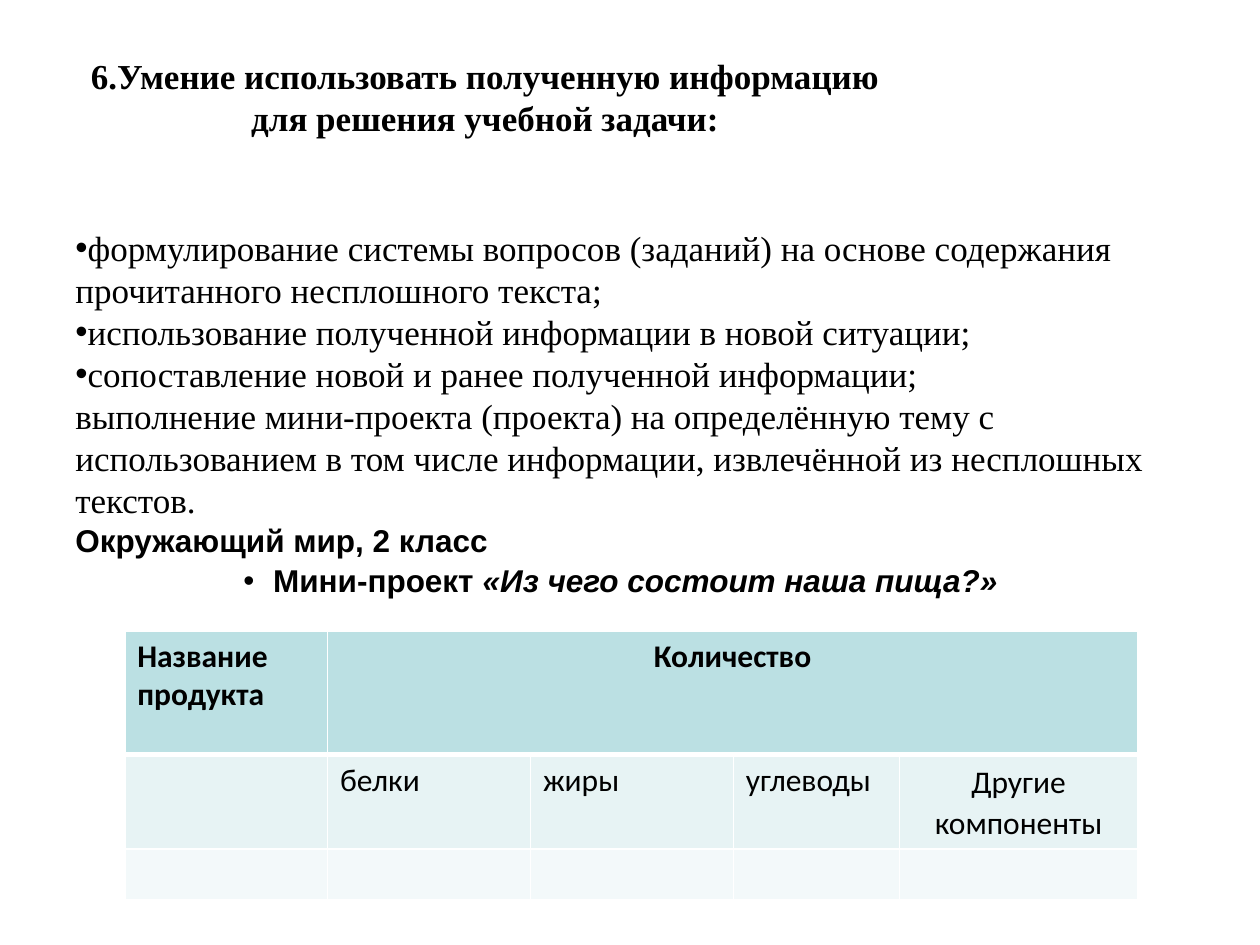
from lxml import etree
from pptx import Presentation
from pptx.dml.color import RGBColor
from pptx.enum.text import MSO_ANCHOR, PP_ALIGN
from pptx.oxml.ns import qn
from pptx.util import Inches, Pt

LEFT, MID = PP_ALIGN.LEFT, PP_ALIGN.CENTER
THEME = {
    "ink": "000000", "line": "FFFFFF",
    "rows": ["BBE0E3", "E7F3F4", "F3F9FA"],
    "serif": ("Times New Roman", 20),
    "sans": ("Arial", 18),
    "cell": ("Calibri", 18),
}

# Content: each run is (text, bold, italic)
TITLE = "6.Умение использовать полученную информацию для решения учебной задачи:"
POINTS = [
    "формулирование системы вопросов (заданий) на основе содержания "
    "прочитанного несплошного текста;",
    "использование полученной информации в новой ситуации;",
    "сопоставление новой и ранее полученной информации;\n"
    "выполнение мини-проекта (проекта) на определённую тему с использованием "
    "в том числе информации, извлечённой из несплошных текстов.",
]
CLASS = "Окружающий мир, 2 класс"
TASK = [("Мини-проект ", True, False),
        ("«Из чего состоит наша пища?»", True, True)]
GRID = [
    ["Название продукта", "Количество", "", "", ""],
    ["", "белки", "жиры", "углеводы", "Другие компоненты"],
    ["", "", "", "", ""],
]
COLS = [1.61, 1.61, 1.61, 1.32, 1.89]
ROWS = [0.98, 0.75, 0.37]


def write(frame, text, font="serif", bold=False, align=LEFT, bullet=False,
          space=None, first=False):
    """Add a paragraph of plain text, or of (text, bold, italic) runs."""
    para = frame.paragraphs[0] if first else frame.add_paragraph()
    if bullet:
        props = para._p.get_or_add_pPr()
        etree.SubElement(props, qn("a:buFont"), typeface="Arial")
        etree.SubElement(props, qn("a:buChar"), char="•")
    para.alignment = align
    if space:
        para.line_spacing = space
    name, size = THEME[font]
    para.font.name, para.font.size = name, Pt(size)
    runs = [(text, bold, False)] if isinstance(text, str) else text
    for words, heavy, slant in runs:
        for num, part in enumerate(words.split("\n")):
            if num:
                para.add_line_break()
            run = para.add_run()
            run.text = part
            style = run.font
            style.name, style.size = name, Pt(size)
            style.bold, style.italic = heavy, slant
            style.color.rgb = RGBColor.from_string(THEME["ink"])


def add_box(slide, left, top, width, height):
    box = slide.shapes.add_textbox(*map(Inches, (left, top, width, height)))
    box.text_frame.word_wrap = True
    return box.text_frame


def edge(cell, widths):
    """Put border lines first in the cell's properties, before its fill."""
    props = cell._tc.get_or_add_tcPr()
    for num, (side, width) in enumerate(widths.items()):
        line = etree.Element(qn("a:ln" + side), w=str(Pt(width)))
        fill = etree.SubElement(line, qn("a:solidFill"))
        etree.SubElement(fill, qn("a:srgbClr"), val=THEME["line"])
        props.insert(num, line)


def main():
    deck = Presentation()
    deck.slide_width, deck.slide_height = Inches(10), Inches(7.5)
    slide = deck.slides.add_slide(deck.slide_layouts[6])

    # Title, set a little above the middle of its box
    frame = add_box(slide, 0.5, 0.3, 6.7, 1.25)
    frame.vertical_anchor = MSO_ANCHOR.MIDDLE
    frame.margin_bottom = Inches(0.37)
    write(frame, TITLE, bold=True, align=MID, first=True)

    # Skills and the task
    frame = add_box(slide, 0.5, 1.75, 9, 4.95)
    for num, point in enumerate(POINTS):
        write(frame, point, bullet=True, first=num == 0)
    write(frame, CLASS, font="sans", bold=True)
    write(frame, TASK, font="sans", align=MID, bullet=True, space=1.07)

    # Food table
    table = slide.shapes.add_table(
        len(ROWS), len(COLS), Inches(0.99), Inches(5.01),
        Inches(sum(COLS)), Inches(sum(ROWS))).table
    for col, width in zip(table.columns, COLS):
        col.width = Inches(width)
    for r, (row, tall) in enumerate(zip(GRID, ROWS)):
        table.rows[r].height = Inches(tall)
        for c, text in enumerate(row):
            cell = table.cell(r, c)
            cell.fill.solid()
            cell.fill.fore_color.rgb = RGBColor.from_string(THEME["rows"][r])
            edge(cell, {"L": 1, "R": 1, "T": 3 if r == 1 else 1,
                        "B": 3 if r == 0 else 1})
            last = text == GRID[1][-1] and r == 1
            write(cell.text_frame, text, font="cell", bold=r == 0, first=True,
                  align=MID if last or (r == 0 and c) else LEFT,
                  space=1.07 if last else None)
    table.cell(0, 1).merge(table.cell(0, len(COLS) - 1))

    deck.save("out.pptx")


if __name__ == "__main__":
    main()
